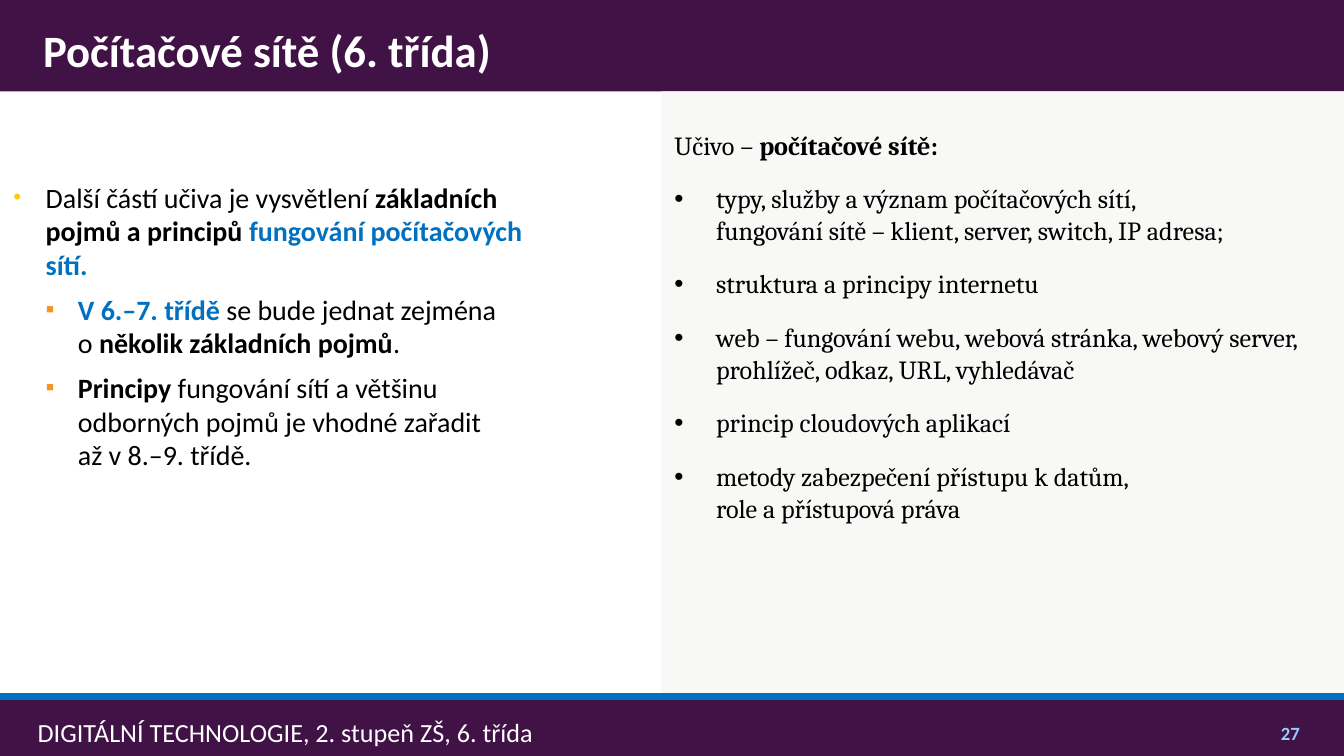
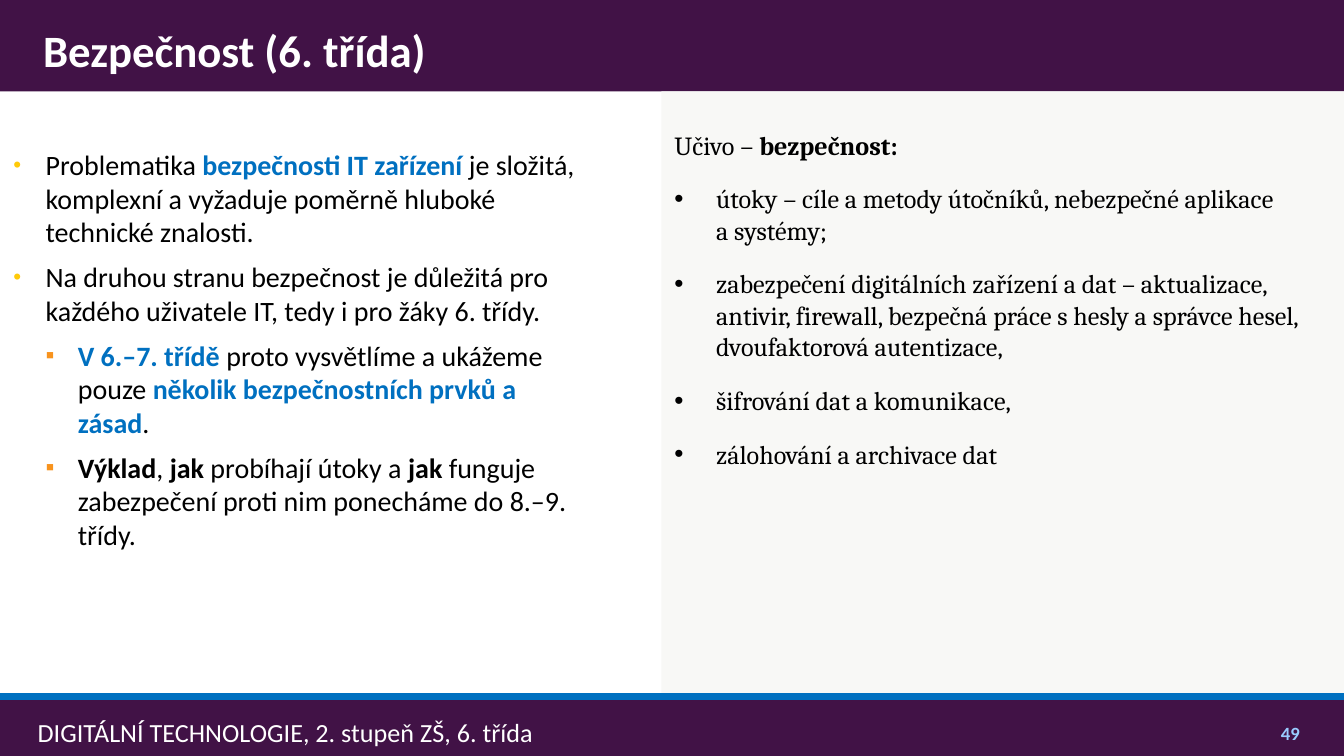
from lxml.etree import SubElement
from pptx import Presentation
from pptx.dml.color import RGBColor
from pptx.enum.shapes import MSO_CONNECTOR, MSO_SHAPE
from pptx.enum.text import MSO_ANCHOR, MSO_AUTO_SIZE, PP_ALIGN
from pptx.oxml.ns import qn
from pptx.util import Inches, Pt

NBSP = chr(160)
FOOTER = "DIGITÁLNÍ TECHNOLOGIE, 2. stupeň ZŠ, 6. třída"

SLIDES = [
    {
        "title": "Počítačové sítě (6. třída)",
        "number": "27",
        "body_box": (0.04, 1.24, 4.09, 3.74),
        "body": [
            (0, [("Další částí učiva je vysvětlení ", ""), ("základních pojmů a principů", "bold"),
                 (" fungování počítačových sítí.", "accent")]),
            (1, [("V 6.–7. třídě ", "accent"), (f"se bude jednat zejména o{NBSP}", ""),
                 ("několik základních pojmů", "bold"), (".", "")]),
            (1, [("Principy", "bold"),
                 (" fungování sítí a většinu odborných pojmů je vhodné zařadit "
                  f"až{NBSP}v{NBSP}8.–9. třídě.", "")]),
        ],
        "topic": "počítačové sítě:",
        "topics": [
            "typy, služby a význam počítačových sítí, \nfungování sítě – klient, server, switch, IP adresa;",
            "struktura a principy internetu",
            "web – fungování webu, webová stránka, webový server, prohlížeč, odkaz, URL, vyhledávač",
            "princip cloudových aplikací",
            f"metody zabezpečení přístupu k datům, \nrole a{NBSP}přístupová práva",
        ],
    },
    {
        "title": "Bezpečnost (6. třída)",
        "number": "49",
        "body_box": (0.04, 1, 4.33, 3.74),
        "body": [
            (0, [("Problematika ", ""), ("bezpečnosti IT zařízení ", "accent"),
                 ("je složitá, komplexní a vyžaduje poměrně hluboké technické znalosti.", "")]),
            (0, [("Na druhou stranu bezpečnost je důležitá pro každého uživatele IT, "
                  "tedy i pro žáky 6. třídy.", "")]),
            (1, [("V 6.–7. třídě ", "accent"), ("proto vysvětlíme a ukážeme pouze ", ""),
                 ("několik bezpečnostních prvků a zásad", "accent"), (".", "")]),
            (1, [("Výklad", "bold"), (", ", ""), ("jak", "bold"), (" probíhají útoky a ", ""),
                 ("jak", "bold"), (" funguje zabezpečení proti nim ponecháme do 8.–9. třídy.", "")]),
        ],
        "topic": "bezpečnost:",
        "topics": [
            f"útoky – cíle a metody útočníků, nebezpečné aplikace a{NBSP}systémy;",
            "zabezpečení digitálních zařízení a dat – aktualizace, antivir, firewall, "
            "bezpečná práce s hesly a správce hesel, dvoufaktorová autentizace,",
            "šifrování dat a komunikace,",
            "zálohování a archivace dat",
        ],
    },
]

PURPLE = RGBColor(0x41, 0x12, 0x46)
PANEL = RGBColor(0xF8, 0xF8, 0xF6)
BLUE = RGBColor(0x00, 0x70, 0xC0)
PALE_BLUE = RGBColor(0x99, 0xCC, 0xFF)
YELLOW = RGBColor(0xFF, 0xCA, 0x08)
ORANGE = RGBColor(0xF8, 0x93, 0x1D)
WHITE = RGBColor(0xFF, 0xFF, 0xFF)
BLACK = RGBColor(0x00, 0x00, 0x00)

SANS, SERIF = "Calibri", "Cambria"
WIDTH = 10
HEIGHT = WIDTH * 9 / 16
BAND_H = 0.68
RULE_Y = 5.18
FOOT_Y = 5.19
PANEL_X = 4.92
BODY_STEP = 0.24
TOPIC_STEP = 0.31
BODY_BULLETS = [("•", YELLOW, 80), ("▪", ORANGE, 90)]


def inches(*values):
    return [Inches(v) for v in values]


def set_frame(tf, insets, anchor=MSO_ANCHOR.TOP):
    tf.word_wrap = True
    tf.auto_size = MSO_AUTO_SIZE.NONE
    tf.vertical_anchor = anchor
    tf.margin_left, tf.margin_top, tf.margin_right, tf.margin_bottom = inches(*insets)


def add_rect(slide, box, color):
    sp = slide.shapes.add_shape(MSO_SHAPE.RECTANGLE, *inches(*box))
    sp.shadow.inherit = False
    sp.fill.solid()
    sp.fill.fore_color.rgb = color
    sp.line.fill.background()
    return sp


def add_box(slide, box, insets, anchor=MSO_ANCHOR.TOP):
    tf = slide.shapes.add_textbox(*inches(*box)).text_frame
    set_frame(tf, insets, anchor)
    return tf


def next_paragraph(tf, space):
    if not tf.paragraphs[0].runs:
        return tf.paragraphs[0]
    p = tf.add_paragraph()
    p.space_before = Pt(space)
    return p


def set_bullet(p, char, left, hang, color=None, percent=100):
    pPr = p._p.get_or_add_pPr()
    pPr.set("marL", str(Inches(left)))
    pPr.set("indent", str(-Inches(hang)))
    if color is not None:
        SubElement(SubElement(pPr, qn("a:buClr")), qn("a:srgbClr")).set("val", str(color))
    SubElement(pPr, qn("a:buSzPct")).set("val", str(percent * 1000))
    SubElement(pPr, qn("a:buFont")).set("typeface", "Arial")
    SubElement(pPr, qn("a:buChar")).set("char", char)


def style(p, font, size, color, bold=False):
    for r in p.runs:
        r.font.name, r.font.size, r.font.bold = font, Pt(size), bold
        r.font.color.rgb = color


def fill_runs(p, parts, font, size):
    for text, _ in parts:
        p.add_run().text = text
    style(p, font, size, BLACK)
    for r, (_, kind) in zip(p.runs, parts):
        r.font.bold = bool(kind)
        if kind == "accent":
            r.font.color.rgb = BLUE


def add_footer(slide, number):
    add_rect(slide, (0, FOOT_Y, WIDTH, HEIGHT - FOOT_Y), PURPLE)
    tf = add_box(slide, (0.22, 5.27, 8.62, 0.36), (0.06, 0.05, 0.03, 0.05), MSO_ANCHOR.MIDDLE)
    tf.text = FOOTER
    style(tf.paragraphs[0], SANS, 14, WHITE)
    tf = add_box(slide, (8.97, 5.31, 0.8, 0.23), (0.1, 0.05, 0.1, 0), MSO_ANCHOR.BOTTOM)
    tf.text = number
    tf.paragraphs[0].alignment = PP_ALIGN.RIGHT
    style(tf.paragraphs[0], SANS, 10, PALE_BLUE, True)


def add_title(slide, text):
    add_rect(slide, (0, 0, WIDTH, BAND_H), PURPLE)
    sp = slide.shapes.title
    sp.left, sp.top, sp.width, sp.height = inches(0.22, 0.06, 9.56, 0.62)
    sp.element.getparent().append(sp.element)
    tf = sp.text_frame
    tf.text = text
    set_frame(tf, (0.1, 0.05, 0.05, 0.05), MSO_ANCHOR.MIDDLE)
    tf.paragraphs[0].alignment = PP_ALIGN.LEFT
    style(tf.paragraphs[0], SANS, 24, WHITE, True)


def add_topics(slide, topic, topics):
    sp = add_rect(slide, (PANEL_X, BAND_H, WIDTH - PANEL_X, RULE_Y - BAND_H), PANEL)
    tf = sp.text_frame
    set_frame(tf, (0.1, 0.28, 0.1, 0.05))
    fill_runs(next_paragraph(tf, 0), [("Učivo – ", ""), (topic, "bold")], SERIF, 14)
    for text in topics:
        p = next_paragraph(tf, 12)
        p.text = text
        set_bullet(p, "•", TOPIC_STEP, TOPIC_STEP)
        style(p, SERIF, 14, BLACK)
    for p in tf.paragraphs:
        p.alignment = PP_ALIGN.LEFT


def add_body(slide, box, body):
    tf = add_box(slide, box, (0.06, 0.1, 0.08, 0.05))
    for level, parts in body:
        p = next_paragraph(tf, 6)
        p.level = level
        char, color, percent = BODY_BULLETS[level]
        set_bullet(p, char, BODY_STEP * (level + 1), BODY_STEP, color, percent)
        fill_runs(p, parts, SANS, 15)


def add_rule(slide):
    line = slide.shapes.add_connector(MSO_CONNECTOR.STRAIGHT, *inches(0, RULE_Y, WIDTH, RULE_Y))
    line.line.color.rgb = BLUE
    line.line.width = Pt(3.78)
    SubElement(line._element.spPr, qn("a:effectLst"))


def main():
    prs = Presentation()
    prs.slide_width, prs.slide_height = inches(WIDTH, HEIGHT)
    for content in SLIDES:
        slide = prs.slides.add_slide(prs.slide_layouts[5])
        add_footer(slide, content["number"])
        add_title(slide, content["title"])
        add_topics(slide, content["topic"], content["topics"])
        add_body(slide, content["body_box"], content["body"])
        add_rule(slide)
    prs.save("out.pptx")


if __name__ == "__main__":
    main()
